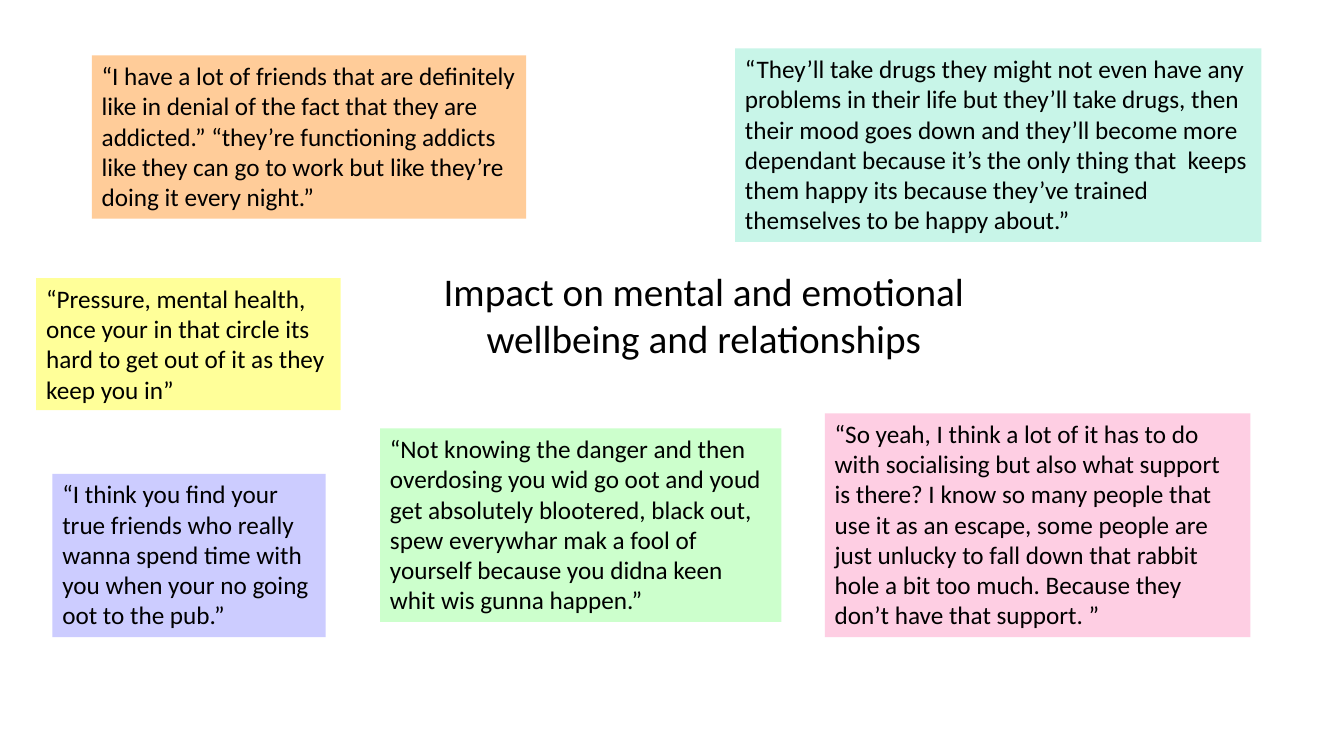
"""Build a slide of coloured interview quotes around a central theme."""
from dataclasses import dataclass

from pptx import Presentation
from pptx.dml.color import RGBColor
from pptx.enum.text import MSO_ANCHOR, MSO_AUTO_SIZE, PP_ALIGN
from pptx.shapes.autoshape import Shape
from pptx.slide import Slide
from pptx.util import Inches, Pt


@dataclass(frozen=True)
class Theme:
    font: str = "Calibri"
    title_size: int = 28
    quote_size: int = 18
    text: str = "000000"
    white: str = "FFFFFF"
    yellow: str = "FFFF99"
    mint: str = "C8F5E8"
    lilac: str = "CCCCFF"
    green: str = "CCFFCC"
    orange: str = "FFCC99"
    pink: str = "FECEE3"


@dataclass(frozen=True)
class Box:
    left: float
    top: float
    width: float
    height: float


@dataclass(frozen=True)
class Quote:
    box: Box
    fill: str
    text: str


THEME = Theme()
SLIDE_W, SLIDE_H = Inches(13.33), Inches(7.5)
TITLE = "Impact on mental and emotional wellbeing and relationships"
TITLE_BOX = Box(28.28, 34.67, 48.16, 13.87)

QUOTES = [
    Quote(Box(2.7, 36.8, 22.66, 17.47), THEME.yellow,
          "“Pressure, mental health, once your in that circle its hard to get "
          "out of it as they keep you in”"),
    Quote(Box(54.69, 6.4, 39.16, 25.6), THEME.mint,
          "“They’ll take drugs they might not even have any problems in their "
          "life but they’ll take drugs, then their mood goes down and they’ll "
          "become more dependant because it’s the only thing that  keeps them "
          "happy its because they’ve trained themselves to be happy about.”"),
    Quote(Box(3.9, 62.67, 20.33, 21.6), THEME.lilac,
          "“I think you find your true friends who really wanna spend time "
          "with you when your no going oot to the pub.”"),
    Quote(Box(28.28, 56.67, 29.86, 25.6), THEME.green,
          "“Not knowing the danger and then overdosing you wid go oot and youd "
          "get absolutely blootered, black out, spew everywhar mak a fool of "
          "yourself because you didna keen whit wis gunna happen.”"),
    Quote(Box(6.83, 7.33, 32.33, 21.6), THEME.orange,
          "“I have a lot of friends that are definitely like in denial of the "
          "fact that they are addicted.” “they’re functioning addicts like "
          "they can go to work but like they’re doing it every night.”"),
    Quote(Box(61.37, 54.67, 31.66, 29.6), THEME.pink,
          "“So yeah, I think a lot of it has to do with socialising but also "
          "what support is there? I know so many people that use it as an "
          "escape, some people are just unlucky to fall down that rabbit hole "
          "a bit too much. Because they don’t have that support. ”"),
]


def place(box: Box) -> dict[str, int]:
    """Turn percentages of the slide into lengths."""
    return {
        "left": int(SLIDE_W * box.left / 100),
        "top": int(SLIDE_H * box.top / 100),
        "width": int(SLIDE_W * box.width / 100),
        "height": int(SLIDE_H * box.height / 100),
    }


def write(sp: Shape, text: str, fill: str, size: int, align: PP_ALIGN) -> None:
    """Fill a shape and set its text."""
    sp.fill.solid()
    sp.fill.fore_color.rgb = RGBColor.from_string(fill)
    tf = sp.text_frame
    frame_format = {
        "word_wrap": True,
        "auto_size": MSO_AUTO_SIZE.SHAPE_TO_FIT_TEXT,
        "vertical_anchor": MSO_ANCHOR.TOP,
    }
    for name, value in frame_format.items():
        setattr(tf, name, value)
    p = tf.paragraphs[0]
    p.alignment = align
    r = p.add_run()
    r.text = text
    for name, value in {"name": THEME.font, "size": Pt(size)}.items():
        setattr(r.font, name, value)
    r.font.color.rgb = RGBColor.from_string(THEME.text)


def add_title(s: Slide) -> None:
    """Move the title placeholder to the centre and fill it."""
    sp = s.shapes.title
    for name, value in place(TITLE_BOX).items():
        setattr(sp, name, value)
    write(sp, TITLE, THEME.white, THEME.title_size, PP_ALIGN.CENTER)


def add_quote(s: Slide, quote: Quote) -> None:
    """Draw one quote on its coloured note."""
    sp = s.shapes.add_textbox(**place(quote.box))
    write(sp, quote.text, quote.fill, THEME.quote_size, PP_ALIGN.LEFT)


def main() -> None:
    """Build and save the slide."""
    prs = Presentation()
    prs.slide_width, prs.slide_height = SLIDE_W, SLIDE_H
    s = prs.slides.add_slide(prs.slide_layouts[5])
    add_title(s)
    for quote in QUOTES:
        add_quote(s, quote)
    prs.save("out.pptx")


if __name__ == "__main__":
    main()
